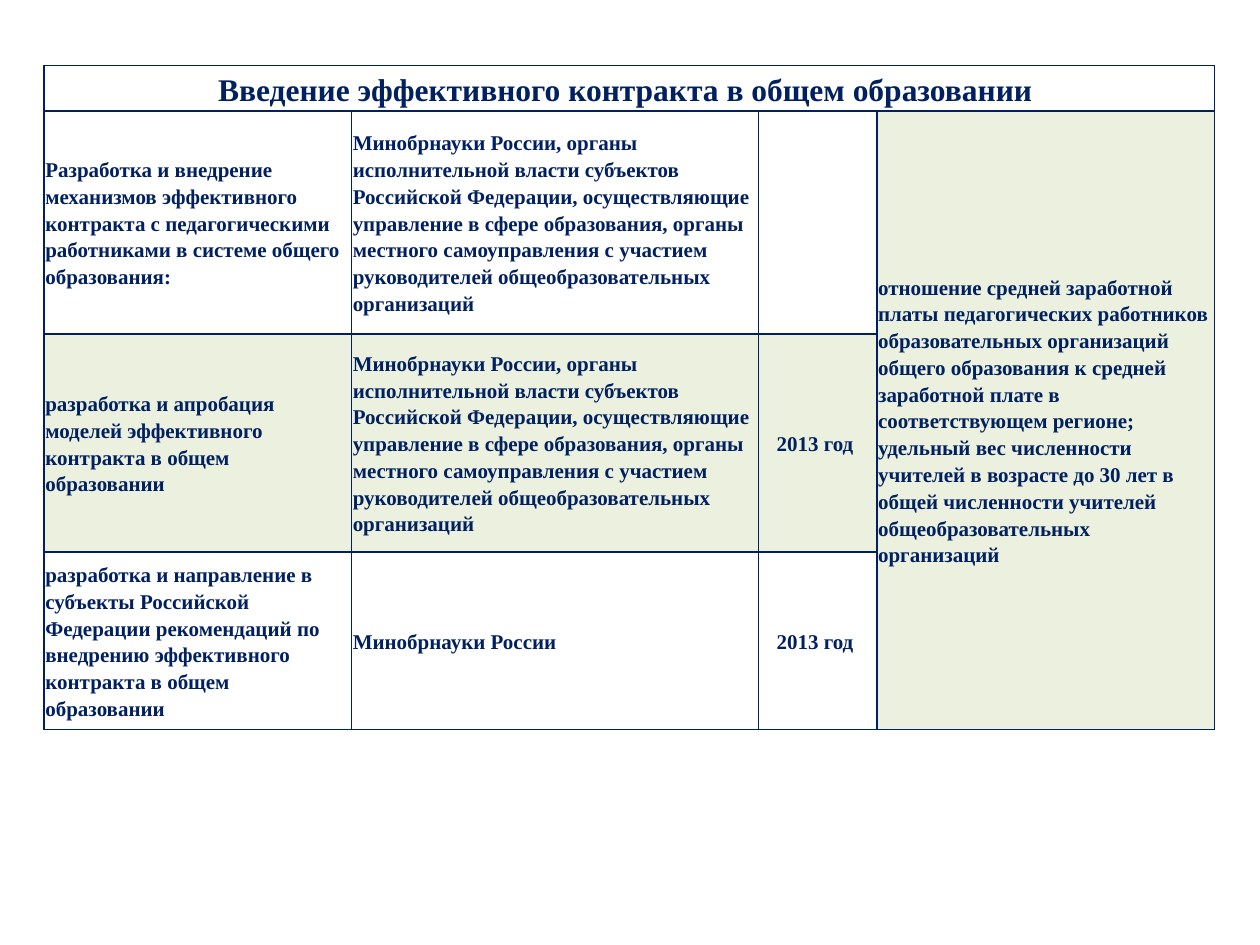
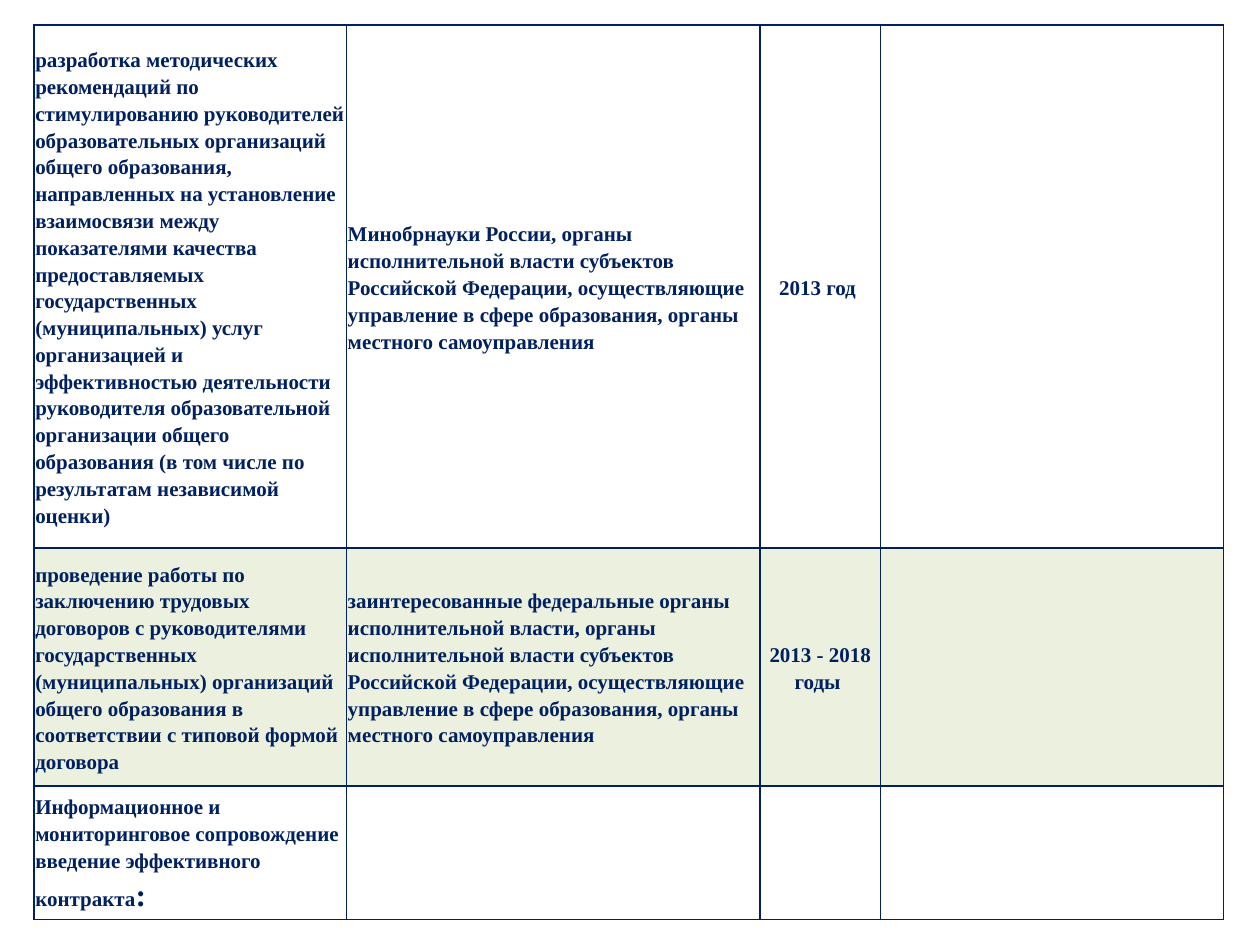
"""Build two slides of tables on effective contracts in general education."""
from dataclasses import dataclass

from lxml import etree
from pptx import Presentation
from pptx.dml.color import RGBColor
from pptx.enum import text
from pptx.oxml import ns
from pptx import util as u


@dataclass(frozen=True)
class Theme:
    font: str = "Times New Roman"
    ink: str = "002060"
    tint: str = "EBF1DE"
    body: int = 12
    large: int = 18
    space: float = 1.15
    inset: float = 0.01
    line: int = 1


THEME = Theme()
DATE_COL = 2

REGION = (
    "Минобрнауки России, органы исполнительной власти субъектов Российской Федерации, "
    "осуществляющие управление в сфере образования, органы местного самоуправления"
)
SCHOOLS = REGION + " с участием руководителей общеобразовательных организаций"

TABLES = [
    dict(
        left=0.35, top=0.52,
        cols=[2.44, 3.23, 0.94, 2.68],
        rows=[0.36, 1.77, 1.73, 1.41],
        cells=[
            ["Введение эффективного контракта в общем образовании ", "", "", ""],
            [
                "Разработка и внедрение механизмов эффективного контракта с педагогическими "
                "работниками в системе общего образования:",
                SCHOOLS,
                "",
                "отношение средней заработной платы педагогических работников образовательных "
                "организаций общего образования к средней заработной плате в соответствующем "
                "регионе; удельный вес численности учителей в возрасте до 30 лет в общей "
                "численности учителей общеобразовательных организаций",
            ],
            [
                "разработка и апробация моделей эффективного контракта в общем образовании",
                SCHOOLS,
                "2013 год ",
                "",
            ],
            [
                "разработка и направление в субъекты Российской Федерации рекомендаций "
                "по внедрению эффективного контракта в общем образовании",
                "Минобрнауки России",
                "2013 год ",
                "",
            ],
        ],
        title=(0, 0),
        spans=[((0, 0), (0, 3)), ((1, 3), (3, 3))],
        tinted=[(1, 3), (2, 0), (2, 1), (2, 2)],
    ),
    dict(
        left=0.27, top=0.2,
        cols=[2.48, 3.28, 0.96, 2.72],
        rows=[4.15, 1.89, 1.06],
        cells=[
            [
                "разработка методических рекомендаций по стимулированию руководителей "
                "образовательных организаций общего образования, направленных на установление "
                "взаимосвязи между показателями качества предоставляемых государственных "
                "(муниципальных) услуг организацией и эффективностью деятельности руководителя "
                "образовательной организации общего образования (в том числе "
                "по результатам независимой оценки)",
                REGION,
                "2013 год ",
                "",
            ],
            [
                "проведение работы по заключению трудовых договоров с руководителями "
                "государственных (муниципальных) организаций общего образования в соответствии "
                "с типовой формой договора",
                REGION.replace("Минобрнауки России", "заинтересованные федеральные органы "
                               "исполнительной власти"),
                "2013 - 2018 годы ",
                "",
            ],
            [
                ("Информационное и мониторинговое сопровождение введение эффективного контракта",
                 ":"),
                "",
                "",
                "",
            ],
        ],
        title=None,
        spans=[],
        tinted=[(1, col) for col in range(4)],
    ),
]


def draw_edges(cell):
    """Put a thin line on all four sides of a cell."""
    props = cell._tc.get_or_add_tcPr()
    for spot, side in enumerate(("lnL", "lnR", "lnT", "lnB")):
        edge = etree.Element(ns.qn(f"a:{side}"), w=str(u.Pt(THEME.line)))
        fill = etree.SubElement(edge, ns.qn("a:solidFill"))
        etree.SubElement(fill, ns.qn("a:srgbClr"), val=THEME.ink)
        props.insert(spot, edge)


def write_cell(cell, words, size, centred):
    """Write a string, or a pair whose second part is large."""
    para = cell.text_frame.paragraphs[0]
    para.line_spacing = THEME.space
    para.alignment = text.PP_ALIGN.CENTER if centred else text.PP_ALIGN.LEFT
    font = para.font
    font.name, font.size, font.bold = THEME.font, u.Pt(size), True
    font.color.rgb = RGBColor.from_string(THEME.ink)
    main, *tail = (words,) if isinstance(words, str) else words
    if main:
        para.add_run().text = main
    for part in tail:
        run = para.add_run()
        run.text = part
        run.font.size = u.Pt(THEME.large)


def style_cell(cell, tinted):
    """Set the margins, anchor, fill and edges of a cell."""
    cell.margin_left = cell.margin_right = u.Inches(THEME.inset)
    cell.margin_top = cell.margin_bottom = u.Inches(THEME.inset)
    cell.vertical_anchor = text.MSO_ANCHOR.MIDDLE
    if tinted:
        cell.fill.solid()
        cell.fill.fore_color.rgb = RGBColor.from_string(THEME.tint)
    else:
        cell.fill.background()
    draw_edges(cell)


def add_grid(slide, data):
    """Add one table to a slide."""
    cols, rows = data["cols"], data["rows"]
    box = [u.Inches(x) for x in (data["left"], data["top"], sum(cols), sum(rows))]
    grid = slide.shapes.add_table(len(rows), len(cols), *box).table
    grid.first_row = grid.horz_banding = False
    for col, width in zip(grid.columns, cols):
        col.width = u.Inches(width)
    for row, height in zip(grid.rows, rows):
        row.height = u.Inches(height)
    for r, line in enumerate(data["cells"]):
        for c, words in enumerate(line):
            cell, title = grid.cell(r, c), (r, c) == data["title"]
            size = THEME.large if title else THEME.body
            write_cell(cell, words, size, title or c == DATE_COL)
            style_cell(cell, (r, c) in data["tinted"])
    for first, last in data["spans"]:
        grid.cell(*first).merge(grid.cell(*last))


def main():
    """Build and save the deck."""
    deck = Presentation()
    deck.slide_width, deck.slide_height = u.Inches(10), u.Inches(7.5)
    for data in TABLES:
        add_grid(deck.slides.add_slide(deck.slide_layouts[6]), data)
    deck.save("out.pptx")


if __name__ == "__main__":
    main()
